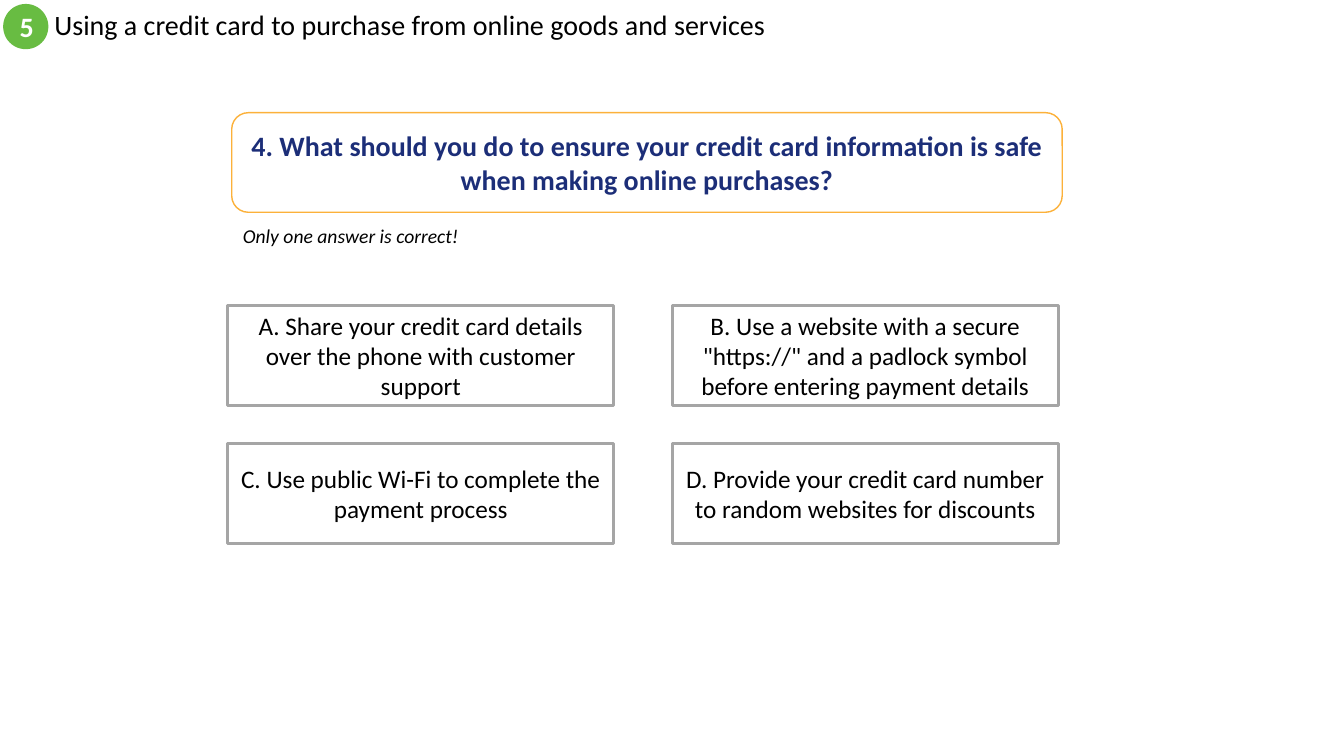
from dataclasses import dataclass

from pptx import Presentation
from pptx import util as u
from pptx.dml.color import RGBColor
from pptx.enum import shapes, text

Cm = u.Cm


@dataclass(frozen=True)
class Theme:
    font: str = "Calibri"
    black: str = "000000"
    white: str = "FFFFFF"
    green: str = "68BC42"
    navy: str = "1C2E78"
    gold: str = "FCB13A"
    grey: str = "A5A5A5"
    head: int = 20
    body: int = 18
    small: int = 14


THEME = Theme()
KIND = shapes.MSO_SHAPE
LEFT, MID = text.PP_ALIGN.LEFT, text.PP_ALIGN.CENTER
ANSWERS = [
    "A. Share your credit card details over the phone with customer support",
    'B. Use a website with a secure "https://" and a padlock symbol '
    "before entering payment details",
    "C. Use public Wi-Fi to complete the payment process",
    "D. Provide your credit card number to random websites for discounts",
]


def write(frame, words, size, color, align=MID, bold=False, italic=False):
    """Fill a text frame with one formatted run."""
    frame.word_wrap = True
    frame.auto_size = text.MSO_AUTO_SIZE.NONE
    frame.vertical_anchor = text.MSO_ANCHOR.MIDDLE
    frame.margin_left = frame.margin_right = Cm(0.25)
    frame.margin_top = frame.margin_bottom = Cm(0.13)
    para = frame.paragraphs[0]
    para.alignment = align
    run = para.add_run()
    run.text = words
    font = run.font
    font.name, font.size = THEME.font, u.Pt(size)
    font.bold, font.italic = bold, italic
    font.color.rgb = RGBColor.from_string(color)


def add_title(slide, words):
    title = slide.shapes.title
    title.left, title.top = Cm(1.12), Cm(0.1)
    title.width, title.height = Cm(20.32), Cm(1.14)
    write(title.text_frame, words, THEME.head, THEME.black, LEFT)
    title.text_frame.paragraphs[0].line_spacing = 0.9


def add_box(slide, kind, box, fill, line=None, width=1):
    """Draw a flat shape; box is left, top, width, height in cm."""
    shape = slide.shapes.add_shape(kind, *map(Cm, box))
    shape.shadow.inherit = False
    shape.fill.solid()
    shape.fill.fore_color.rgb = RGBColor.from_string(fill)
    if line:
        shape.line.color.rgb = RGBColor.from_string(line)
        shape.line.width = u.Pt(width)
    else:
        shape.line.fill.background()
    return shape


def add_badge(slide, words):
    badge = add_box(slide, KIND.OVAL, (0.08, 0.1, 1.14, 1.14), THEME.green)
    write(badge.text_frame, words, THEME.head, THEME.white, bold=True)


def add_query(slide, words):
    query = add_box(slide, KIND.ROUNDED_RECTANGLE, (5.84, 2.84, 20.93, 2.51),
                    THEME.white, THEME.gold)
    write(query.text_frame, words, THEME.head, THEME.navy, bold=True)


def add_hint(slide, words):
    hint = slide.shapes.add_textbox(Cm(5.87), Cm(5.51), Cm(5.99), Cm(0.86))
    frame = hint.text_frame
    write(frame, words, THEME.small, THEME.black, LEFT, italic=True)
    frame.vertical_anchor = text.MSO_ANCHOR.TOP
    frame.auto_size = text.MSO_AUTO_SIZE.SHAPE_TO_FIT_TEXT


def add_answers(slide, answers):
    """Lay the answers out in two columns."""
    for i, words in enumerate(answers):
        row, col = divmod(i, 2)
        box = (5.74 + col * 11.2, 7.7 + row * 3.48, 9.73, 2.51)
        card = add_box(slide, KIND.RECTANGLE, box, THEME.white, THEME.grey, 2)
        write(card.text_frame, words, THEME.body, THEME.black)


def main():
    deck = Presentation()
    deck.slide_width, deck.slide_height = Cm(33.87), Cm(19.05)
    slide = deck.slides.add_slide(deck.slide_layouts[5])

    # Heading
    add_title(slide, "Using a credit card to purchase from online goods "
                     "and services")
    add_badge(slide, "5")

    # Question
    add_query(slide, "4. What should you do to ensure your credit card "
                     "information is safe when making online purchases?")
    add_hint(slide, "Only one answer is correct!")

    # Choices
    add_answers(slide, ANSWERS)
    deck.save("out.pptx")


if __name__ == "__main__":
    main()
